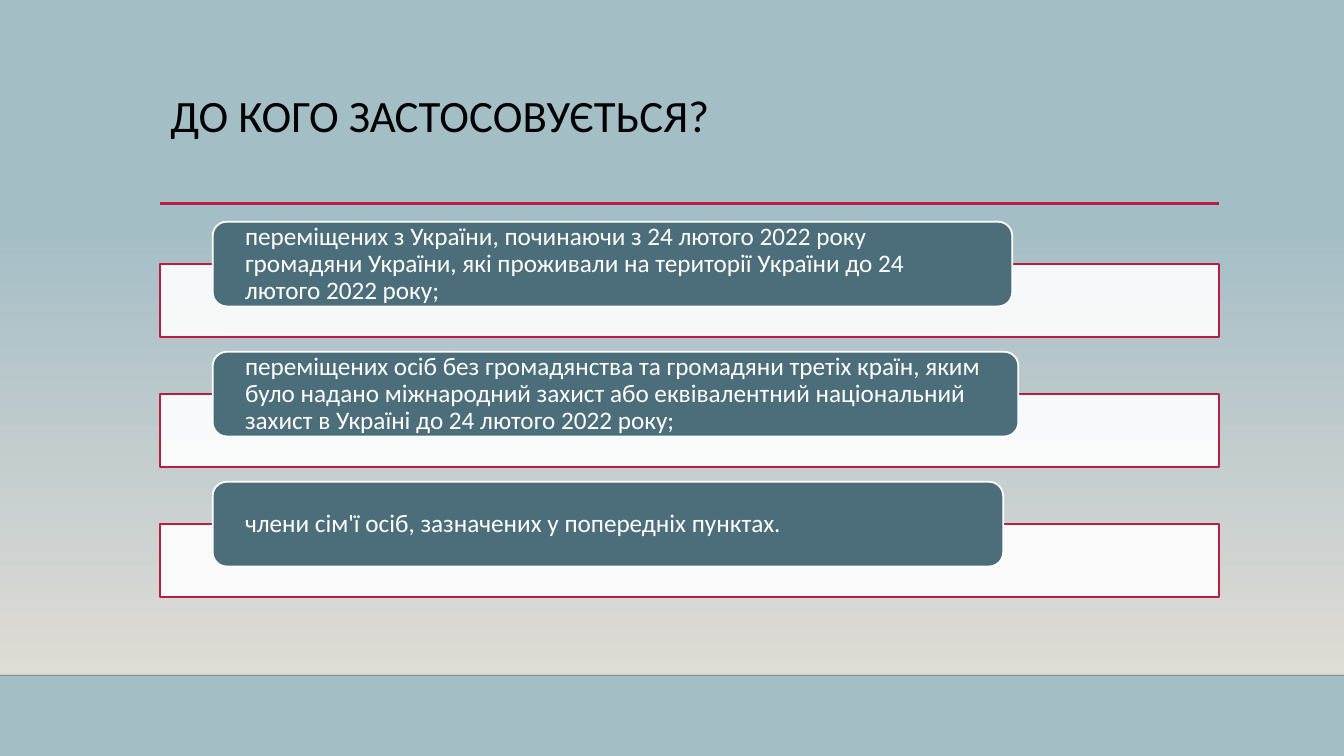
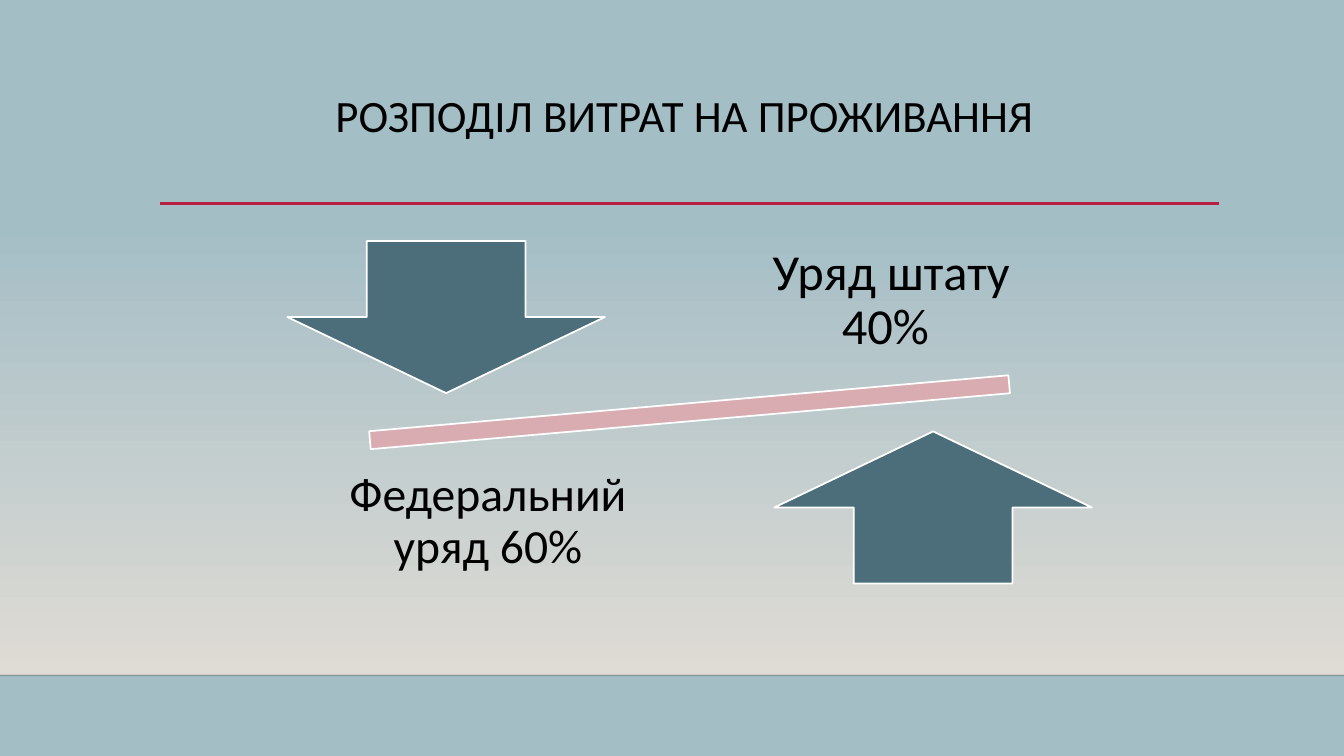
import dataclasses

import lxml.etree
import pptx
import pptx.dml.color
import pptx.enum.shapes
import pptx.enum.text
import pptx.oxml.ns
import pptx.util

Inches = pptx.util.Inches
Shape = pptx.enum.shapes.MSO_SHAPE
Align = pptx.enum.text.PP_ALIGN
Anchor = pptx.enum.text.MSO_ANCHOR


@dataclasses.dataclass(frozen=True)
class Theme:
    font: str = "Calibri"
    sky: str = "A4BEC6"
    sand: str = "DFDBD5"
    accent: str = "B71E42"
    slate: str = "4C6E7A"
    rose: str = "D8ACB0"
    white: str = "FFFFFF"
    black: str = "000000"
    title_size: int = 32
    card_size: int = 18
    state_size: int = 36
    federal_size: int = 34
    outline: float = 1.25
    rule: float = 2.5


THEME = Theme()
WIDTH, HEIGHT = 13.33, 7.5
TITLE_BOX = (1.59, 0.88, 10.5, 1.15)
CONTENT_BOX = (1.59, 2.2, 10.5, 3.72)


def rgb(value):
    return pptx.dml.color.RGBColor.from_string(value)


def set_values(target, values):
    for name, value in values.items():
        setattr(target, name, value)


def set_alpha(shape, percent):
    """Make the first plain colour of a shape partly transparent."""
    colour = next(shape.element.iter(pptx.oxml.ns.qn("a:srgbClr")))
    alpha = lxml.etree.SubElement(colour, pptx.oxml.ns.qn("a:alpha"))
    alpha.set("val", str(percent * 1000))


def write(shape, text, size, colour, align=Align.LEFT, anchor=Anchor.MIDDLE, insets=(0.1, 0.05)):
    frame = shape.text_frame
    across, down = map(Inches, insets)
    set_values(frame, {
        "word_wrap": True,
        "auto_size": pptx.enum.text.MSO_AUTO_SIZE.NONE,
        "vertical_anchor": anchor,
        "margin_left": across, "margin_right": across,
        "margin_top": down, "margin_bottom": down,
    })
    para = frame.paragraphs[0]
    set_values(para, {"alignment": align, "line_spacing": 0.9})
    span = para.add_run()
    span.text = text
    set_values(span.font, {"name": THEME.font, "size": pptx.util.Pt(size)})
    span.font.color.rgb = rgb(colour)


def add_block(page, kind, box, fill, line):
    block = page.shapes.add_shape(kind, *map(Inches, box))
    block.shadow.inherit = False
    block.fill.solid()
    block.fill.fore_color.rgb = rgb(fill)
    block.line.color.rgb = rgb(line)
    block.line.width = pptx.util.Pt(THEME.outline)
    return block


def add_rule(page, left, right, top, colour, width):
    rule = page.shapes.add_connector(
        pptx.enum.shapes.MSO_CONNECTOR.STRAIGHT,
        Inches(left), Inches(top), Inches(right), Inches(top))
    rule.line.color.rgb = rgb(colour)
    rule.line.width = pptx.util.Pt(width)
    properties = rule.element.find(pptx.oxml.ns.qn("p:spPr"))
    lxml.etree.SubElement(properties, pptx.oxml.ns.qn("a:effectLst"))
    return rule


def add_label(page, box, text, size, inset):
    label = page.shapes.add_textbox(*map(Inches, box))
    write(label, text, size, THEME.black, Align.CENTER, insets=(inset, inset))


def dress_layout(layout, page):
    """Draw the shared backdrop on a page and move it to the layout."""
    background = layout.background.fill
    background.solid()
    background.fore_color.rgb = rgb(THEME.sky)

    # Gradient floor
    floor_top, floor_height = 2.21, 4.49
    floor = page.shapes.add_shape(
        Shape.RECTANGLE, *map(Inches, (0, floor_top, WIDTH, floor_height)))
    floor.shadow.inherit = False
    floor.line.fill.background()
    floor.fill.gradient()
    floor.fill.gradient_angle = 270
    for stop, colour in zip(floor.fill.gradient_stops, (THEME.sky, THEME.sand)):
        stop.color.rgb = rgb(colour)

    # Floor edge and title rule
    edge = add_rule(page, 0, WIDTH, floor_top + floor_height, THEME.black, 1)
    set_alpha(edge, 20)
    left, _, width, _ = TITLE_BOX
    title_rule = add_rule(page, left, left + width, 2.02, THEME.accent, THEME.rule)

    for order, part in enumerate((floor, edge, title_rule)):
        part.element.xpath(".//p:cNvPr")[0].set("id", str(100 + order))
        layout.shapes.element.insert(2 + order, part.element)

    # Title position
    names = ("left", "top", "width", "height")
    set_values(layout.placeholders[0], dict(zip(names, map(Inches, TITLE_BOX))))


def add_title(page, text, align=Align.LEFT):
    write(page.shapes.title, text, THEME.title_size, THEME.black, align, Anchor.TOP)


def add_card_list(page, box, cards):
    """Stack cards, each overlapping the top of a wide panel."""
    left, top, width, height = box
    panel_height, panel_drop, card_height, indent = 0.72, 0.42, 0.84, 0.52
    pitch = (height - panel_drop - panel_height) / (len(cards) - 1)
    for row, (text, card_width) in enumerate(cards):
        row_top = top + row * pitch
        panel = add_block(page, Shape.RECTANGLE,
                          (left, row_top + panel_drop, width, panel_height),
                          THEME.white, THEME.accent)
        set_alpha(panel, 90)
        card = add_block(page, Shape.ROUNDED_RECTANGLE,
                         (left + indent, row_top, card_width, card_height),
                         THEME.slate, THEME.white)
        write(card, text, THEME.card_size, THEME.white, insets=(0.28, 0))


def add_balance(page, box, upper_text, lower_text):
    """Place a tilted beam between two opposed arrows and their labels."""
    left, top, width, height = box
    arrow_width, arrow_height = 3.15, 1.51
    label_width, label_height = 3.36, 1.58

    # Beam
    beam_width, beam_height = 8.66, 0.76
    beam = add_block(page, Shape.MATH_MINUS,
                     (left + (width - beam_width) / 2, top + 1.51, beam_width, beam_height),
                     THEME.rose, THEME.white)
    beam.rotation = 355

    # Arrows
    inset = 1.26
    arrows = (
        (Shape.DOWN_ARROW, left + inset, top + 0.19),
        (Shape.UP_ARROW, left + width - inset - arrow_width, top + 2.08),
    )
    for kind, arrow_left, arrow_top in arrows:
        add_block(page, kind, (arrow_left, arrow_top, arrow_width, arrow_height),
                  THEME.slate, THEME.white)

    # Labels
    label_inset = 1.57
    add_label(page, (left + width - label_inset - label_width, top, label_width, label_height),
              upper_text, THEME.state_size, 0.28)
    add_label(page, (left + label_inset, top + 2.19, label_width, label_height),
              lower_text, THEME.federal_size, 0.26)


def build_scope(page):
    add_title(page, "ДО КОГО ЗАСТОСОВУЄТЬСЯ?")
    add_card_list(page, CONTENT_BOX, (
        ("переміщених з України, починаючи з 24 лютого 2022 року громадяни України, "
         "які проживали на території України до 24 лютого 2022 року;", 7.93),
        ("переміщених осіб без громадянства та громадяни третіх країн, яким було надано "
         "міжнародний захист або еквівалентний національний захист в Україні "
         "до 24 лютого 2022 року;", 7.99),
        ("члени сім'ї осіб, зазначених у попередніх пунктах.", 7.84),
    ))


def build_costs(page):
    add_title(page, "РОЗПОДІЛ ВИТРАТ НА ПРОЖИВАННЯ ", Align.CENTER)
    add_balance(page, CONTENT_BOX, "Уряд штату 40% ", "Федеральний уряд 60%")


def main():
    deck = pptx.Presentation()
    deck.slide_width, deck.slide_height = Inches(WIDTH), Inches(HEIGHT)
    layout = deck.slide_layouts.get_by_name("Title Only")
    pages = [deck.slides.add_slide(layout) for _ in range(2)]
    dress_layout(layout, pages[0])
    for build, page in zip((build_scope, build_costs), pages):
        build(page)
    deck.save("out.pptx")


if __name__ == "__main__":
    main()
